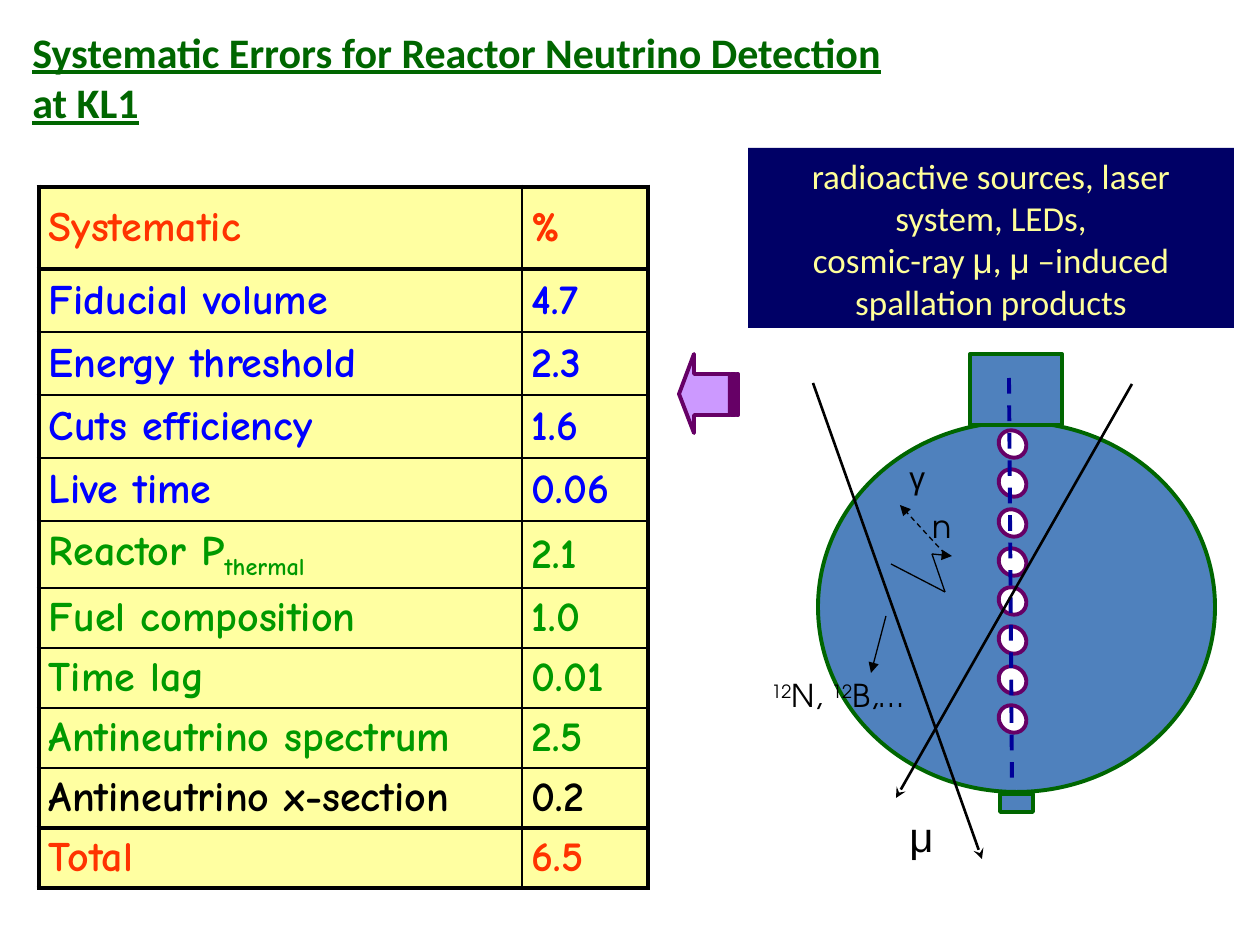
import pptx
import pptx.util
import pptx.dml.color
import pptx.enum.dml
import pptx.enum.shapes
import pptx.enum.text
import pptx.oxml
import pptx.oxml.ns

RGB = pptx.dml.color.RGBColor
BLACK = RGB(0x00, 0x00, 0x00)
WHITE = RGB(0xFF, 0xFF, 0xFF)
RED = RGB(0xFF, 0x33, 0x00)
BLUE = RGB(0x00, 0x00, 0xFF)
GREEN = RGB(0x00, 0x99, 0x00)
DARK = RGB(0x00, 0x66, 0x00)
STEEL = RGB(0x4F, 0x81, 0xBD)
PLUM = RGB(0x66, 0x00, 0x66)
LILAC = RGB(0xCC, 0x99, 0xFF)
NAVY = RGB(0x00, 0x00, 0x66)
INDIGO = RGB(0x00, 0x00, 0x99)
CREAM = RGB(0xFF, 0xFF, 0x99)
YELLOW = RGB(0xFF, 0xFF, 0x45)

PX = pptx.util.Inches(1) / 126
Pt = pptx.util.Pt
qn = pptx.oxml.ns.qn
NS = pptx.oxml.ns.nsdecls("a")
Kind = pptx.enum.shapes.MSO_SHAPE
Dash = pptx.enum.dml.MSO_LINE

deck = pptx.Presentation()
deck.slide_width = round(1260 * PX)
deck.slide_height = round(945 * PX)
slide = deck.slides.add_slide(deck.slide_layouts[6])
shapes = slide.shapes


def write(frame, paras, face, size, hue, bold=None):
    for i, parts in enumerate(paras):
        para = frame.add_paragraph() if i else frame.paragraphs[0]
        para.font.name = face
        para.font.size = Pt(size)
        para.font.color.rgb = hue
        para.font.bold = bold
        for words, base, other in parts:
            run = para.add_run()
            run.text = words
            if base:
                run.font._element.set("baseline", str(base * 1000))
            if other:
                run.font.name = other


def draw(ends, hue, width, head=None, dash=None):
    line = shapes.add_connector(
        pptx.enum.shapes.MSO_CONNECTOR.STRAIGHT, *[round(v * PX) for v in ends])
    line.line.color.rgb = hue
    line.line.width = Pt(width)
    if dash:
        line.line.dash_style = dash
    if head:
        line.line._get_or_add_ln().append(
            pptx.oxml.parse_xml(f'<a:tailEnd {NS} type="{head}"/>'))
    line._element.spPr.append(pptx.oxml.parse_xml(f"<a:effectLst {NS}/>"))


data = [
    ("Systematic", "%", RED, 82),
    ("Fiducial volume", "4.7", BLUE, 63),
    ("Energy threshold", "2.3", BLUE, 63),
    ("Cuts efficiency", "1.6", BLUE, 63),
    ("Live time", "0.06", BLUE, 63),
    ("Reactor P", "2.1", GREEN, 67),
    ("Fuel composition", "1.0", GREEN, 60),
    ("Time lag", "0.01", GREEN, 60),
    ("Antineutrino spectrum", "2.5", GREEN, 60),
    ("Antineutrino x-section", "0.2", BLACK, 60),
    ("Total", "6.5", RED, 60),
]
rules = [3, 2.25] + [1] * 8 + [2.25, 3]
high = sum(row[3] for row in data)
table = shapes.add_table(
    len(data), 2, *[round(v * PX) for v in (39, 187, 609, high)]).table
table.first_row = False
table.horz_banding = False
for col, wide in zip(table.columns, (483, 126)):
    col.width = round(wide * PX)
for r, (label, value, hue, tall) in enumerate(data):
    table.rows[r].height = round(tall * PX)
    for c, words in enumerate((label, value)):
        cell = table.cell(r, c)
        cell.vertical_anchor = pptx.enum.text.MSO_ANCHOR.MIDDLE
        cell.margin_left = cell.margin_right = round(10 * PX)
        cell.margin_top = cell.margin_bottom = round(5 * PX)
        parts = [(words, 0, None)]
        if words == "Reactor P":
            parts.append(("thermal", -25, None))
        write(cell.text_frame, [parts], "Comic Neue", 24, hue, True)
        cell.fill.solid()
        cell.fill.fore_color.rgb = YELLOW
        props = cell._tc.get_or_add_tcPr()
        props.find(".//" + qn("a:srgbClr")).append(
            pptx.oxml.parse_xml(f'<a:alpha {NS} val="50000"/>'))
        sides = [("L", (3, 1)[c]), ("R", (1, 3)[c]),
                 ("T", rules[r]), ("B", rules[r + 1])]
        for i, (side, width) in enumerate(sides):
            props.insert(i, pptx.oxml.parse_xml(
                f'<a:ln{side} {NS} w="{Pt(width)}"><a:solidFill>'
                f'<a:srgbClr val="{BLACK}"/></a:solidFill></a:ln{side}>'))

build = shapes.build_freeform(694, 433, scale=PX)
build.add_line_segments(
    [(694, 415), (730, 415), (730, 374), (694, 374), (694, 354), (679, 394)])
for left, right in ((731, 735), (737, 738)):
    build.move_to(right, 415)
    build.add_line_segments([(right, 374), (left, 374), (left, 415)])
arrow = build.convert_to_shape()
arrow.shadow.inherit = False
arrow.fill.solid()
arrow.fill.fore_color.rgb = LILAC
arrow.line.color.rgb = PLUM
arrow.line.width = Pt(2.25)

title = shapes.add_textbox(*[round(v * PX) for v in (20, 20, 1182, 115)])
title.text_frame.word_wrap = True
write(title.text_frame,
      [[("Systematic Errors for Reactor Neutrino Detection", 0, None)],
       [("at KL1", 0, None)]], "Calibri", 24, DARK, True)
for para in title.text_frame.paragraphs:
    para.font.underline = True
    para.runs[0].font._element.append(pptx.oxml.parse_xml(
        f'<a:effectLst {NS}><a:outerShdw blurRad="38100" dist="38100" '
        f'dir="2700000"><a:srgbClr val="C0C0C0"/></a:outerShdw></a:effectLst>'))

parts = [
    (Kind.OVAL, (818, 422, 397, 370), 0, STEEL, DARK),
    (Kind.RECTANGLE, (970, 354, 92, 71), 0, STEEL, DARK),
    (Kind.RECTANGLE, (1000, 794, 33, 18), 0, STEEL, DARK),
]
for i in range(8):
    parts.append(
        (Kind.OVAL, (998, 431 + round(39.3 * i), 29, 26), 42.9, WHITE, PLUM))
parts.append((Kind.RECTANGLE, (748, 148, 486, 180), 0, NAVY, None))
for kind, box, turn, fill, edge in parts:
    shape = shapes.add_shape(kind, *[round(v * PX) for v in box])
    shape.shadow.inherit = False
    shape.rotation = turn
    shape.fill.solid()
    shape.fill.fore_color.rgb = fill
    if edge:
        shape.line.color.rgb = edge
        shape.line.width = Pt(2.25)
    else:
        shape.line.fill.background()

note = shape.text_frame
note.word_wrap = True
write(note, [
    [("radioactive sources, laser system, LEDs,", 0, None)],
    [("cosmic-ray ", 0, None), ("μ", 0, "Arial"), (", ", 0, None),
     ("μ", 0, "Arial"), (" –induced spallation products", 0, None)],
], "Calibri", 20, CREAM)
for para in note.paragraphs:
    para.alignment = pptx.enum.text.PP_ALIGN.CENTER

draw((1009, 378, 1012, 782), INDIGO, 2.25, dash=Dash.DASH)
draw((813, 383, 982, 859), BLACK, 1.5, "stealth")
draw((1132, 384, 896, 798), BLACK, 1.5, "stealth")
draw((891, 564, 945, 592), BLACK, 0.75)
draw((945, 592, 932, 554), BLACK, 0.75)
draw((932, 554, 952, 556), BLACK, 0.75, "triangle")
draw((886, 616, 871, 673), BLACK, 0.75, "triangle")
draw((945, 554, 900, 505), BLACK, 0.75, "triangle", Dash.DASH)

labels = [
    ((897, 804, 49, 63), "Arial", 24, [("μ", 0, None)]),
    ((920, 501, 44, 50), "TeX Gyre Adventor", 18, [("n", 0, None)]),
    ((759, 670, 173, 50), "TeX Gyre Adventor", 18,
     [("12", 30, None), ("N, ", 0, None), ("12", 30, None), ("B,…", 0, None)]),
    ((897, 452, 39, 50), "Arial", 18, [("γ", 0, None)]),
]
for box, face, size, words in labels:
    label = shapes.add_textbox(*[round(v * PX) for v in box])
    label.text_frame.word_wrap = False
    write(label.text_frame, [words], face, size, BLACK)

deck.save("out.pptx")
